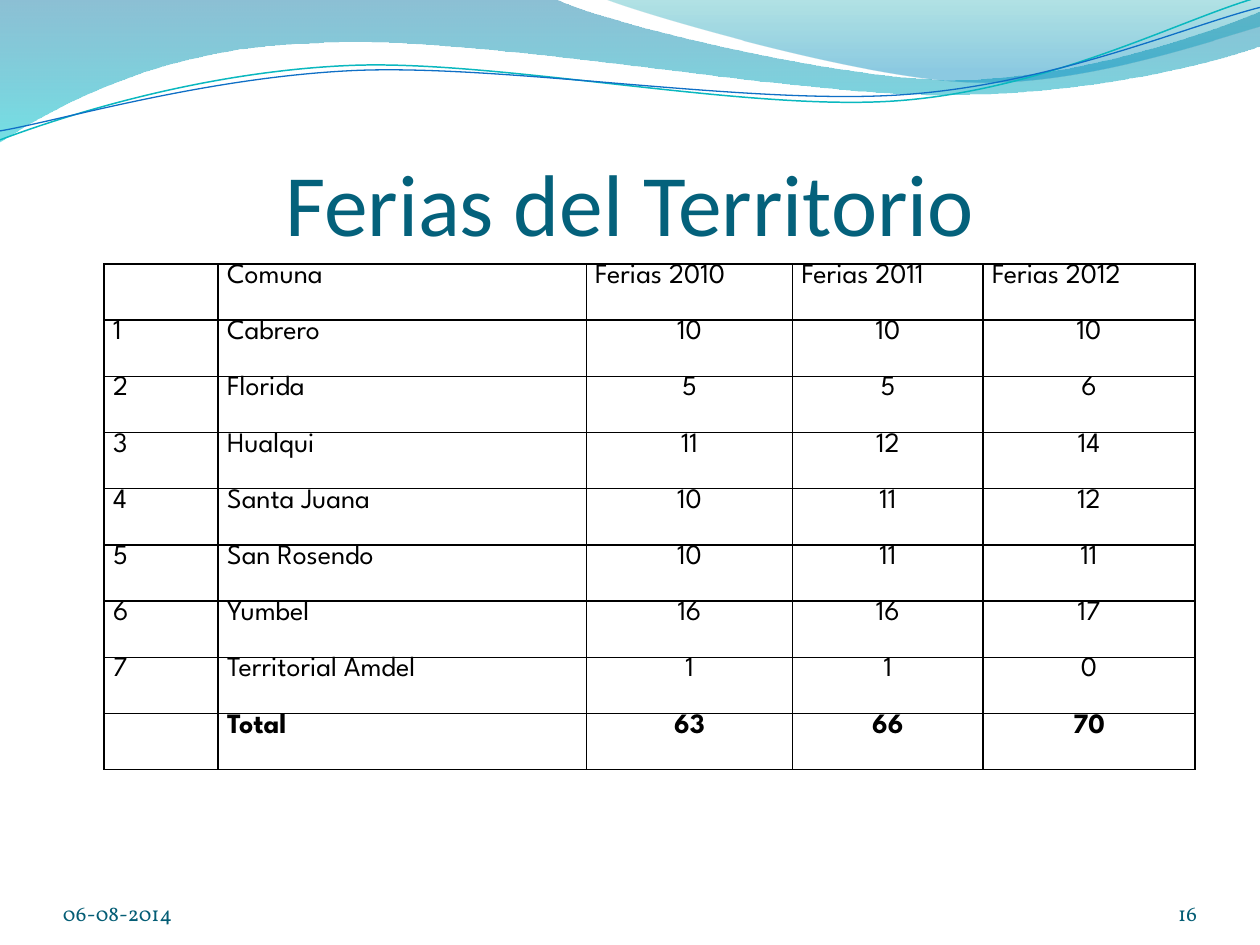
import math
from dataclasses import dataclass

from lxml import etree
from pptx import Presentation
from pptx import util as u
from pptx.dml.color import RGBColor
from pptx.enum import text
from pptx.oxml.ns import qn

Point = tuple[float, float]


@dataclass(frozen=True)
class Theme:
    title: str = "04617B"
    footer: str = "045D75"
    ink: str = "000000"
    title_font: str = "Calibri"
    table_font: str = "League Spartan"
    footer_font: str = "Vollkorn"
    title_size: int = 50
    table_size: int = 16
    footer_size: int = 12
    border_width: float = 1


@dataclass(frozen=True)
class Stop:
    position: float
    color: str
    opacity: int


@dataclass(frozen=True)
class Curve:
    """Points in centimetres; a segment has one point (line) or three (Bézier)."""
    start: Point
    segments: tuple[tuple[Point, ...], ...]


@dataclass(frozen=True)
class Wave:
    curve: Curve
    stops: tuple[Stop, Stop]


@dataclass(frozen=True)
class Strand:
    curve: Curve
    center: Point
    color: str
    width: float


@dataclass(frozen=True)
class Label:
    content: str
    box: tuple[float, float, float, float]
    font: str
    size: int
    color: str
    align: text.PP_ALIGN
    top_inset: float = 0


THEME = Theme()
LEFT, CENTER, RIGHT = text.PP_ALIGN.LEFT, text.PP_ALIGN.CENTER, text.PP_ALIGN.RIGHT

WAVES = (
    Wave(Curve((0, 0), (
        ((11.18, -0.03),),
        ((12.09, 0.43), (16.87, 1.6), (19.25, 1.6)),
        ((21.67, 1.6), (24.33, 0.66), (25.4, 0.23)),
        ((25.43, 0.91),),
        ((24.97, 1.12), (22.1, 1.93), (18.95, 1.91)),
        ((15.8, 1.91), (9.7, 0.71), (6.53, 0.86)),
        ((3.28, 0.91), (1.17, 2.11), (-0.03, 2.87)),
        ((0, 0),),
    )), (Stop(0, "0074A1", 45), Stop(1, "00C6CF", 55))),
    Wave(Curve((12.17, -0.03), (
        ((12.93, 0.28), (17.32, 1.57), (19.53, 1.65)),
        ((21.74, 1.75), (24.41, 0.81), (25.4, 0.53)),
        ((25.4, 0),),
        ((12.17, -0.03),),
    )), (Stop(0, "00A1A9", 30), Stop(0.8, "008BBF", 45))),
)
STRAND_ROTATION = 357.3
STRANDS = (
    Strand(Curve((0, 2.82), (
        ((1.22, 2.36), (4.01, 1.45), (7.04, 1.32)),
        ((10.03, 1.19), (15.06, 2.26), (18.11, 2.03)),
        ((21.16, 1.8), (23.83, 0.38), (25.35, -0.05)),
    )), (12.67, 1.46), "0AB8BF", 0.85),
    Strand(Curve((0, 2.64), (
        ((1.19, 2.44), (4.17, 1.55), (7.19, 1.42)),
        ((10.24, 1.3), (15.16, 2.13), (18.21, 1.91)),
        ((21.23, 1.7), (23.9, 0.53), (25.4, 0.15)),
    )), (12.69, 1.5), "0F6FC6", 0.75),
)
LABELS = (
    Label("06-08-2014", (1.27, 17.65, 5.92, 1.02), THEME.footer_font,
          THEME.footer_size, THEME.footer, LEFT),
    Label("16", (22.02, 17.65, 2.11, 1.02), THEME.footer_font,
          THEME.footer_size, THEME.footer, RIGHT),
    Label("Ferias del Territorio", (1.27, 1.95, 22.86, 3.17), THEME.title_font,
          THEME.title_size, THEME.title, CENTER, top_inset=0.13),
)
COLUMN_WIDTHS = (2.3, 7.42, 4.16, 3.84, 4.27)
TABLE_LEFT, TABLE_TOP, TABLE_HEIGHT = 2.1, 5.32, 10.2
ROWS = (
    ("", "Comuna", "Ferias 2010", "Ferias 2011", "Ferias 2012"),
    ("1", "Cabrero", "10", "10", "10"),
    ("2", "Florida", "5", "5", "6"),
    ("3", "Hualqui", "11", "12", "14"),
    ("4", "Santa Juana", "10", "11", "12"),
    ("5", "San Rosendo", "10", "11", "11"),
    ("6", "Yumbel", "16", "16", "17"),
    ("7", "Territorial Amdel", "1", "1", "0"),
    ("", "Total", "63", "66", "70"),
)


def turn_back(point: Point, center: Point) -> Point:
    """Undo the strand rotation, so that the shape can carry it."""
    angle = math.radians(-STRAND_ROTATION)
    x, y = point[0] - center[0], point[1] - center[1]
    return (center[0] + x * math.cos(angle) - y * math.sin(angle),
            center[1] + x * math.sin(angle) + y * math.cos(angle))


def add_curve(slide, curve: Curve, close: bool):
    """Lay out every point with the builder, then join control points into Béziers."""
    points = [point for segment in curve.segments for point in segment]
    builder = slide.shapes.build_freeform(*map(u.Cm, curve.start))
    builder.add_line_segments([(u.Cm(x), u.Cm(y)) for x, y in points], close=close)
    shape = builder.convert_to_shape()
    shape.shadow.inherit = False
    lines = iter(list(shape._element.spPr.iter(qn("a:lnTo"))))
    for segment in curve.segments:
        nodes = [next(lines) for _ in segment]
        if len(nodes) == 3:
            outline = nodes[0].getparent()
            bezier = etree.SubElement(outline, qn("a:cubicBezTo"))
            nodes[0].addprevious(bezier)
            for node in nodes:
                bezier.append(node[0])
                outline.remove(node)
    return shape


def add_wave(slide, wave: Wave) -> None:
    shape = add_curve(slide, wave.curve, close=True)
    shape.line.fill.background()
    shape.fill.gradient()
    shape.fill.gradient_angle = 270
    for gradient_stop, stop in zip(shape.fill.gradient_stops, wave.stops):
        gradient_stop.position = stop.position
        gradient_stop.color.rgb = RGBColor.from_string(stop.color)
    for color, stop in zip(shape._element.spPr.iter(qn("a:srgbClr")), wave.stops):
        etree.SubElement(color, qn("a:alpha"), val=str(stop.opacity * 1000))


def add_strand(slide, strand: Strand) -> None:
    level = Curve(turn_back(strand.curve.start, strand.center), tuple(
        tuple(turn_back(point, strand.center) for point in segment)
        for segment in strand.curve.segments))
    shape = add_curve(slide, level, close=False)
    shape.rotation = STRAND_ROTATION
    shape.fill.background()
    shape.line.color.rgb = RGBColor.from_string(strand.color)
    shape.line.width = u.Pt(strand.width)


def style_paragraph(paragraph, font: str, size: int, color: str, align) -> None:
    paragraph.alignment = align
    paragraph.font.name = font
    paragraph.font.size = u.Pt(size)
    paragraph.font.color.rgb = RGBColor.from_string(color)


def add_label(slide, label: Label) -> None:
    frame = slide.shapes.add_textbox(*map(u.Cm, label.box)).text_frame
    frame.word_wrap = True
    frame.vertical_anchor = text.MSO_ANCHOR.BOTTOM
    frame.margin_left = frame.margin_right = frame.margin_bottom = 0
    frame.margin_top = u.Cm(label.top_inset)
    frame.text = label.content
    style_paragraph(frame.paragraphs[0], label.font, label.size, label.color, label.align)


def add_borders(cell) -> None:
    properties = cell._tc.get_or_add_tcPr()
    for side in ("lnL", "lnR", "lnT", "lnB"):
        line = etree.SubElement(properties, qn(f"a:{side}"), w=str(u.Pt(THEME.border_width)))
        fill = etree.SubElement(line, qn("a:solidFill"))
        etree.SubElement(fill, qn("a:srgbClr"), val=THEME.ink)


def add_fairs_table(slide) -> None:
    table = slide.shapes.add_table(
        len(ROWS), len(COLUMN_WIDTHS), u.Cm(TABLE_LEFT), u.Cm(TABLE_TOP),
        u.Cm(sum(COLUMN_WIDTHS)), u.Cm(TABLE_HEIGHT)).table
    table.first_row = table.horz_banding = False
    for column, width in zip(table.columns, COLUMN_WIDTHS):
        column.width = u.Cm(width)
    for row_index, values in enumerate(ROWS):
        for column_index, value in enumerate(values):
            cell = table.cell(row_index, column_index)
            add_borders(cell)
            cell.fill.background()
            cell.margin_left = cell.margin_right = u.Cm(0.18)
            cell.margin_top = cell.margin_bottom = 0
            cell.text = value
            paragraph = cell.text_frame.paragraphs[0]
            align = CENTER if row_index > 0 and column_index > 1 else LEFT
            style_paragraph(paragraph, THEME.table_font, THEME.table_size, THEME.ink, align)
            paragraph.font.bold = row_index == len(ROWS) - 1


def main() -> None:
    presentation = Presentation()
    presentation.slide_width, presentation.slide_height = u.Cm(25.4), u.Cm(19.05)
    slide = presentation.slides.add_slide(presentation.slide_layouts[6])
    for wave in WAVES:
        add_wave(slide, wave)
    for strand in STRANDS:
        add_strand(slide, strand)
    for label in LABELS:
        add_label(slide, label)
    add_fairs_table(slide)
    presentation.save("out.pptx")


if __name__ == "__main__":
    main()
